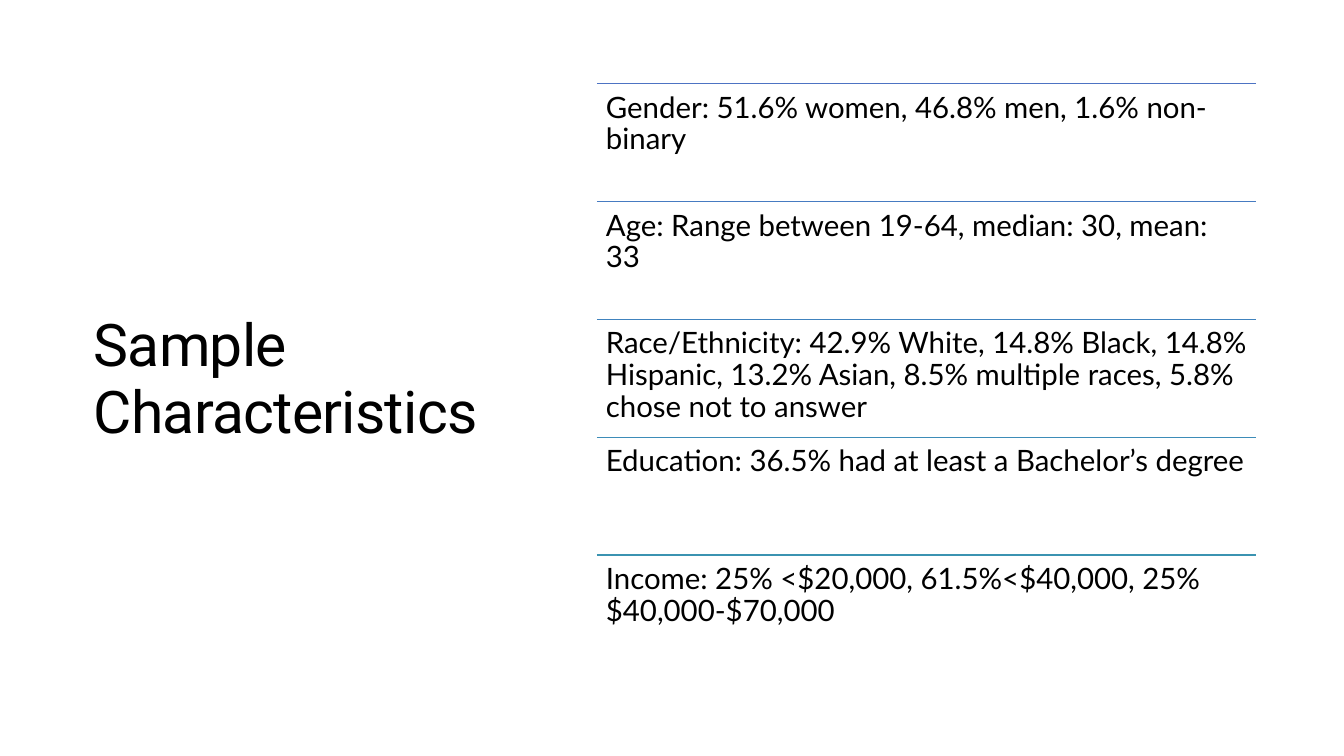
from pptx import Presentation
from pptx.dml.color import RGBColor
from pptx.enum.shapes import MSO_CONNECTOR as Connector
from pptx.enum.text import MSO_ANCHOR as Anchor, MSO_AUTO_SIZE as AutoSize
from pptx.oxml.ns import qn
from pptx.util import Cm, Pt
from lxml.etree import SubElement

COLORS = {
    "background": "FFFFFF",
    "text": "000000",
    "gender": "4D73C3",
    "age": "467BC1",
    "race": "4083BE",
    "education": "3D8CB8",
    "income": "3B93B1",
}
TITLE_FORMAT = {"name": "Roboto", "size": Pt(42)}
ROW_FORMAT = {"name": "Lato", "size": Pt(21)}

CHARACTERISTICS = {
    "gender": "Gender: 51.6% women, 46.8% men, 1.6% non-binary",
    "age": "Age: Range between 19-64, median: 30, mean: 33",
    "race": "Race/Ethnicity: 42.9% White, 14.8% Black, 14.8% Hispanic, "
            "13.2% Asian, 8.5% multiple races, 5.8% chose not to answer",
    "education": "Education: 36.5% had at least a Bachelor’s degree",
    "income": "Income: 25% <$20,000, 61.5%<$40,000, 25% $40,000-$70,000",
}
LIST_LEFT, LIST_TOP = 15.04, 2.11
LIST_WIDTH, ROW_HEIGHT = 16.61, 2.97


def color(name):
    return RGBColor.from_string(COLORS[name])


def add_text(slide, text, box, font_format, anchor, inset, line_spacing):
    """Add a wrapped text box, with box and inset in cm, and return its run."""
    shape = slide.shapes.add_textbox(*(Cm(length) for length in box))
    frame_format = {
        "word_wrap": True,
        "auto_size": AutoSize.NONE,
        "vertical_anchor": anchor,
        "margin_left": Cm(inset),
        "margin_right": Cm(inset),
        "margin_top": Cm(inset),
        "margin_bottom": Cm(inset),
    }
    for attribute, value in frame_format.items():
        setattr(shape.text_frame, attribute, value)
    paragraph = shape.text_frame.paragraphs[0]
    paragraph.line_spacing = line_spacing
    run = paragraph.add_run()
    run.text = text
    for attribute, value in font_format.items():
        setattr(run.font, attribute, value)
    run.font.color.rgb = color("text")
    return run


def add_title(slide, text):
    run = add_text(slide, text, (2.11, 2.16, 10.85, 14.83), TITLE_FORMAT,
                   Anchor.MIDDLE, 0.25, 0.95)
    run.font._element.set("spc", "-50")


def add_divider(slide, top, color_name):
    line = slide.shapes.add_connector(
        Connector.STRAIGHT, Cm(LIST_LEFT), Cm(top),
        Cm(LIST_LEFT + LIST_WIDTH), Cm(top))
    line.line.color.rgb = color(color_name)
    line.line.width = Pt(1)
    SubElement(line._element.spPr, qn("a:effectLst"))


def add_row(slide, index, name, text):
    top = LIST_TOP + index * ROW_HEIGHT
    add_divider(slide, top, name)
    add_text(slide, text, (LIST_LEFT, top, LIST_WIDTH, ROW_HEIGHT), ROW_FORMAT,
             Anchor.TOP, 0.23, 0.9)


def main():
    presentation = Presentation()
    presentation.slide_width, presentation.slide_height = Cm(33.87), Cm(19.05)
    slide = presentation.slides.add_slide(presentation.slide_layouts[6])
    slide.background.fill.solid()
    slide.background.fill.fore_color.rgb = color("background")
    add_title(slide, "Sample Characteristics")
    for index, (name, text) in enumerate(CHARACTERISTICS.items()):
        add_row(slide, index, name, text)
    presentation.save("out.pptx")


if __name__ == "__main__":
    main()
